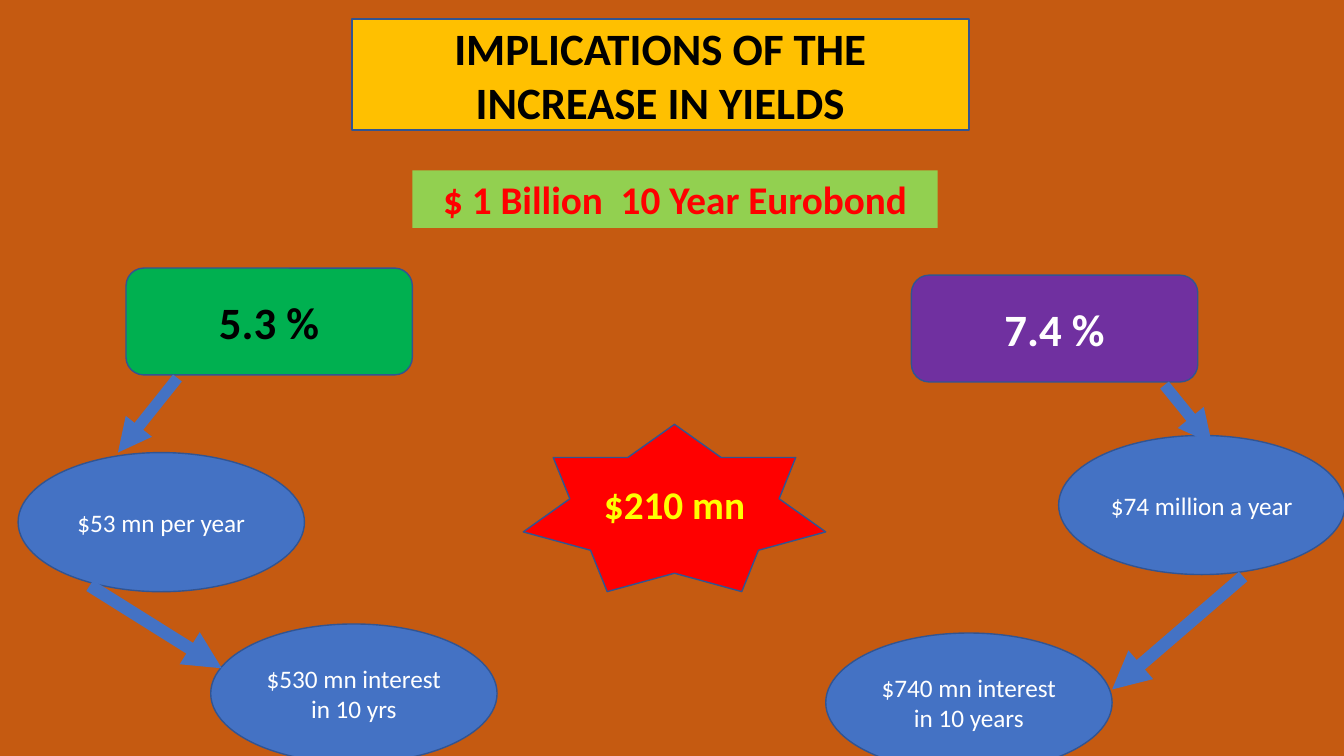
from dataclasses import dataclass
from lxml.etree import SubElement
from pptx import Presentation
from pptx.dml.color import RGBColor
from pptx.enum.shapes import MSO_CONNECTOR, MSO_SHAPE
from pptx.enum.text import MSO_ANCHOR, MSO_AUTO_SIZE, PP_ALIGN
from pptx.oxml.ns import qn
from pptx.util import Inches, Pt


@dataclass(frozen=True)
class Theme:
    """Colours, font and type sizes of the slide."""
    font: str = "Calibri"
    back: str = "C55A11"
    edge: str = "325491"
    blue: str = "4472C4"
    gold: str = "FFC000"
    lime: str = "92D050"
    green: str = "00B050"
    purple: str = "7030A0"
    red: str = "FF0000"
    yellow: str = "FFFF00"
    black: str = "000000"
    white: str = "FFFFFF"
    head: int = 32
    mid: int = 28
    body: int = 18


THEME = Theme()
NODE = (2.84, 1.38)
RATE = (2.84, 1.06)


def paint(shape, fill, edge=None):
    """Fill a shape and outline it if an edge colour is given."""
    shape.fill.solid()
    shape.fill.fore_color.rgb = RGBColor.from_string(fill)
    if edge:
        shape.line.color.rgb = RGBColor.from_string(edge)
        shape.line.width = Pt(1)


def write(shape, text, size, color, bold=True):
    """Set centred text in a shape."""
    frame = shape.text_frame
    frame.text = text
    frame.word_wrap = True
    frame.auto_size = MSO_AUTO_SIZE.NONE
    frame.vertical_anchor = MSO_ANCHOR.MIDDLE
    para = frame.paragraphs[0]
    para.alignment = PP_ALIGN.CENTER
    font = para.runs[0].font
    font.name, font.size, font.bold = THEME.font, Pt(size), bold
    font.color.rgb = RGBColor.from_string(color)


def add_node(slide, kind, box, fill, text, size, color, bold=True):
    """Draw an outlined shape with text in the given box."""
    shape = slide.shapes.add_shape(kind, *map(Inches, box))
    shape.shadow.inherit = False
    paint(shape, fill, THEME.edge)
    write(shape, text, size, color, bold)


def add_arrow(slide, start, end, width):
    """Draw a thick arrow between two points."""
    line = slide.shapes.add_connector(
        MSO_CONNECTOR.STRAIGHT, *map(Inches, (*start, *end)))
    line.line.color.rgb = RGBColor.from_string(THEME.blue)
    line.line.width = Pt(width)
    SubElement(line.line._get_or_add_ln(), qn("a:tailEnd"), type="triangle")
    SubElement(line._element.spPr, qn("a:effectLst"))


def add_title(slide, box, text):
    """Turn the title placeholder into a rounded banner."""
    title = slide.shapes.title
    title.left, title.top, title.width, title.height = map(Inches, box)
    geom = SubElement(title._element.spPr, qn("a:prstGeom"), prst="roundRect")
    SubElement(geom, qn("a:avLst"))
    paint(title, THEME.gold, THEME.edge)
    write(title, text, THEME.head, THEME.black)


def add_label(slide, box, text):
    """Place the filled bond caption."""
    label = slide.shapes.add_textbox(*map(Inches, box))
    paint(label, THEME.lime)
    write(label, text, THEME.mid, THEME.red)
    label.text_frame.vertical_anchor = MSO_ANCHOR.TOP
    label.text_frame.auto_size = MSO_AUTO_SIZE.SHAPE_TO_FIT_TEXT


def add_chain(slide, left, top, rate, fill, color, costs, arrows):
    """Draw a rate, its costs and arrows, offset from the rate's corner."""
    add_node(slide, MSO_SHAPE.ROUNDED_RECTANGLE, (left, top, *RATE), fill,
             rate, THEME.head, color)
    for x, y, text in costs:
        add_node(slide, MSO_SHAPE.OVAL, (left + x, top + y, *NODE),
                 THEME.blue, text, THEME.body, THEME.white, False)
    for (x1, y1, x2, y2), width in zip(arrows, (8, 9)):
        add_arrow(slide, (left + x1, top + y1), (left + x2, top + y2), width)


def main():
    """Build and save the slide."""
    deck = Presentation()
    deck.slide_width, deck.slide_height = Inches(13.33), Inches(7.5)
    slide = deck.slides.add_slide(deck.slide_layouts[5])
    paint(slide.background, THEME.back)
    add_title(slide, (3.49, 0.19, 6.12, 1.1),
              "IMPLICATIONS OF THE INCREASE IN YIELDS")
    add_label(slide, (4.09, 1.69, 5.21, 0.57), "$ 1 Billion  10 Year Eurobond")
    add_chain(slide, 1.25, 2.66, "5.3 %", THEME.green, THEME.black,
              [(-1.07, 1.83, "$53 mn per year"),
               (0.84, 3.53, "$530 mn interest in 10 yrs")],
              [(0.51, 1.09, -0.08, 1.83), (-0.36, 3.15, 0.95, 3.97)])
    add_chain(slide, 9.04, 2.73, "7.4 %", THEME.purple, THEME.white,
              [(1.46, 1.59, "$74 million a year"),
               (-0.85, 3.55, "$740 mn interest in 10 years")],
              [(2.51, 1.09, 2.98, 1.67), (3.29, 2.99, 1.99, 4.11)])
    add_node(slide, MSO_SHAPE.STAR_7_POINT, (5.19, 4.21, 3, 1.66), THEME.red,
             "$210 mn", THEME.mid, THEME.yellow)
    deck.save("out.pptx")


if __name__ == "__main__":
    main()
